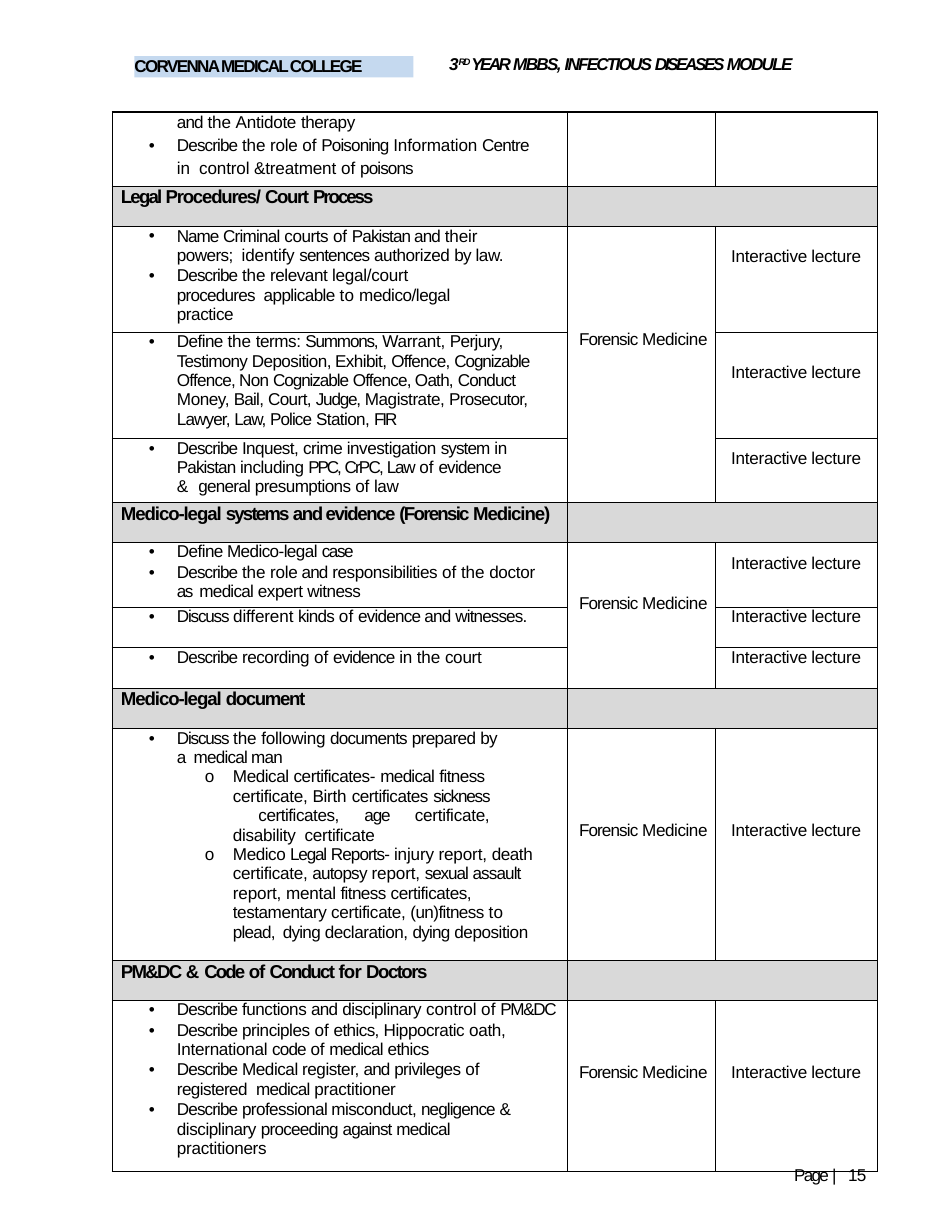
from typing import NamedTuple, Optional
from lxml.etree import SubElement
from pptx import Presentation
from pptx.dml.color import RGBColor
from pptx.enum.shapes import MSO_SHAPE
from pptx.enum.text import MSO_ANCHOR, PP_ALIGN
from pptx.oxml.ns import qn
from pptx.util import Inches, Pt

BLACK = RGBColor(0, 0, 0)
GREY = RGBColor(0xD9, 0xD9, 0xD9)
BLUE = RGBColor(0xC5, 0xD9, 0xEF)
FONT = "Arial"
COLS, ROWS = 85, 110


class Para(NamedTuple):
    runs: list
    right: float = 0
    left: float = 0
    bullet: Optional[str] = None
    align: PP_ALIGN = PP_ALIGN.LEFT
    spacing: object = 1.0
    before: float = 0
    size: float = 11
    bold: bool = False
    italic: bool = False


def item(*runs, right=0, spacing=1.02):
    return Para(runs, right, 5.8, "•", spacing=spacing, before=0.6)


def subitem(*runs, right=0, align=PP_ALIGN.LEFT):
    return Para(runs, right, 10.8, "o", align, 1.02)


def heading(*runs):
    return Para(runs, left=0.8, spacing=Pt(14.1), size=12, bold=True)


class Page:
    def __init__(self):
        self.prs = Presentation()
        self.prs.slide_width, self.prs.slide_height = Inches(8.5), Inches(11)
        self.s = self.prs.slides.add_slide(self.prs.slide_layouts[6])

    def x(self, cols):
        return round(self.prs.slide_width * cols / COLS)

    def y(self, rows):
        return round(self.prs.slide_height * rows / ROWS)

    def place(self, col, row, width, height):
        return self.x(col), self.y(row), self.x(width), self.y(height)

    def fill_text(self, tf, paras):
        for i, para in enumerate(paras):
            p = tf.add_paragraph() if i else tf.paragraphs[0]
            p.alignment = para.align
            p.line_spacing = para.spacing
            p.space_before = Pt(para.before)
            pPr = p._p.get_or_add_pPr()
            pPr.set("marL", str(self.x(para.left)))
            pPr.set("marR", str(self.x(para.right)))
            pPr.set("indent", str(self.x(-2.5) if para.bullet else 0))
            if para.bullet:
                SubElement(pPr, qn("a:buFont")).set("typeface", FONT)
                SubElement(pPr, qn("a:buChar")).set("char", para.bullet)
            for text, spc, *base in para.runs:
                r = p.add_run()
                r.text = text
                r.font.name, r.font.size = FONT, Pt(10.5 if base else para.size)
                r.font.bold, r.font.italic = para.bold, para.italic
                r.font.color.rgb = BLACK
                rPr = r._r.get_or_add_rPr()
                rPr.set("spc", str(round(spc * 100)))
                if base:
                    rPr.set("baseline", str(base[0] * 1000))

    def frame(self, shape, para, top=0):
        tf = shape.text_frame
        tf.margin_left = tf.margin_right = tf.margin_bottom = 0
        tf.margin_top = self.y(top)
        tf.vertical_anchor = MSO_ANCHOR.TOP
        tf.word_wrap = True
        self.fill_text(tf, [para])

    def text(self, at, para, top=0):
        self.frame(self.s.shapes.add_textbox(*self.place(*at)), para, top)

    def box(self, at, color, para):
        sp = self.s.shapes.add_shape(MSO_SHAPE.RECTANGLE, *self.place(*at))
        sp.shadow.inherit = False
        sp.fill.solid()
        sp.fill.fore_color.rgb = color
        sp.line.fill.background()
        self.frame(sp, para)

    def borders(self, cell, first):
        tcPr = cell._tc.get_or_add_tcPr()
        for side in "LRTB":
            ln = SubElement(tcPr, qn("a:ln" + side))
            ln.set("w", str(Pt(1 if first and side == "T" else 0.5)))
            fill = SubElement(ln, qn("a:solidFill"))
            SubElement(fill, qn("a:srgbClr")).set("val", str(BLACK))

    def table(self, col, row, widths, heights, shaded):
        at = self.place(col, row, sum(widths), sum(heights))
        tbl = self.s.shapes.add_table(len(heights), len(widths), *at).table
        tbl.first_row = tbl.horz_banding = False
        for c, width in zip(tbl.columns, widths):
            c.width = self.x(width)
        for i, (tr, height) in enumerate(zip(tbl.rows, heights)):
            tr.height = self.y(height)
            for cell in tr.cells:
                cell.margin_left = cell.margin_right = 0
                cell.margin_top = cell.margin_bottom = 0
                self.borders(cell, i == 0)
                if i in shaded:
                    cell.fill.solid()
                    cell.fill.fore_color.rgb = GREY
                else:
                    cell.fill.background()
        return tbl

    def cell(self, cell, paras, top=0):
        cell.margin_top = self.y(top)
        self.fill_text(cell.text_frame, paras)


DESCRIBE, DISCUSS = ("Describe ", -0.6), ("Discuss ", -0.8)
THE, OF, AND, MEDICAL = ("the ", -0.1), ("of ", 0), ("and ", -0.6), ("medical ", -0.5)
LECTURE = Para([("Interactive lecture", -0.2)], right=1.4, align=PP_ALIGN.RIGHT)
SUBJECT = Para([("Forensic ", -0.6), ("Medicine", -0.3)], left=1)

HEADINGS = {
    1: heading(("Legal ", -1.2), ("Procedures/ ", -0.8), ("Court ", -0.9), ("Process", -1.3)),
    5: heading(("Medico-legal ", -0.7), ("systems ", -1.2), ("and evidence ", -0.9),
               ("(Forensic ", -1.1), ("Medicine)", -0.7)),
    9: heading(("Medico-legal ", -0.7), ("document", -0.9)),
    11: heading(("PM&DC ", -1.1), ("& ", -0.2), ("Code ", -1.2), ("of ", -0.6),
                ("Conduct ", -1.1), ("for ", -0.5), ("Doctors", -1)),
}
TOPICS = {
    0: [Para([AND, THE, ("Antidote ", -0.2), ("therapy", -0.3)], left=5.8, spacing=Pt(13.2)),
        item(DESCRIBE, THE, ("role ", -0.2), OF, ("Poisoning ", -0.6), ("Information ", -0.1),
             ("Centre ", -0.5), ("in  control &treatment ", -0.1), OF, ("poisons", -0.6),
             right=2.6, spacing=1.16)],
    2: [item(("Name ", -0.7), ("Criminal ", -0.5), ("courts ", -0.3), ("of ", -0.1),
             ("Pakistan and ", -0.6), ("their ", -0.1), ("powers;  ", -0.4), ("identify ", -0.1),
             ("sentences ", -0.6), ("authorized ", -0.3), ("by ", -0.5), ("law.", -0.3), right=4.6),
        item(DESCRIBE, THE, ("relevant ", -0.3), ("legal/court ", -0.2), ("procedures  ", -0.5),
             ("applicable ", -0.4), ("to ", 0.1), ("medico/legal practice", -0.3), right=8.7)],
    3: [item(("Define ", -0.4), THE, ("terms: ", -0.3), ("Summons, ", -0.8), ("Warrant, ", -0.2),
             ("Perjury,  ", -0.4), ("Testimony ", -0.5), ("Deposition, Exhibit, ", -0.4),
             ("Offence, ", -0.5), ("Cognizable  ", -0.7), ("Offence, Non ", -0.5),
             ("Cognizable ", -0.7), ("Offence, Oath, ", -0.5), ("Conduct  ", -0.6),
             ("Money, ", -0.3), ("Bail, ", -0.5), ("Court, ", -0.4), ("Judge, ", -0.8),
             ("Magistrate, ", -0.3), ("Prosecutor,  ", -0.5), ("Lawyer, ", -0.6), ("Law, ", -0.7),
             ("Police ", -0.6), ("Station, ", -0.4), ("FIR", -1.4), right=2)],
    4: [item(DESCRIBE, ("Inquest, ", -0.4), ("crime investigation ", -0.3), ("system ", -0.6),
             ("in  ", -0.1), ("Pakistan ", -0.6), ("including ", -0.3), ("PPC, ", -1.4),
             ("CrPC, ", -1.2), ("Law ", -0.8), OF, ("evidence ", -0.5), ("&  ", 0.1),
             ("general ", -0.5), ("presumptions ", -0.4), ("of ", -0.1), ("law", -0.3), right=4.8)],
    6: [item(("Define Medico-legal ", -0.4), ("case", -0.9), spacing=1.0),
        item(DESCRIBE, THE, ("role", -0.2), (" and ", -0.6), ("responsibilities ", -0.3), OF, THE,
             ("doctor ", -0.2), ("as  ", -1.1), MEDICAL, ("expert ", -0.3), ("witness", -0.4),
             right=2)],
    7: [item(DISCUSS, ("different ", -0.1), ("kinds ", -0.5), OF, ("evidence and ", -0.5),
             ("witnesses.", -0.6), spacing=1.0)],
    8: [item(DESCRIBE, ("recording ", -0.3), OF, ("evidence ", -0.6), ("in the ", -0.1),
             ("court", -0.2), spacing=1.0)],
    10: [item(DISCUSS, THE, ("following ", -0.2), ("documents ", -0.5), ("prepared ", -0.4),
              ("by ", -0.5), ("a  ", -0.8), ("medical man", -0.5), right=5.7),
         subitem(("Medical certificates- ", -0.3), MEDICAL, ("fitness  ", -0.4),
                 ("certificate, Birth ", -0.2), ("certificates ", -0.3), ("sickness  ", -0.8),
                 ("certificates, ", -0.3), ("age ", -0.8),
                 ("certificate, disability  certificate", -0.2),
                 right=7, align=PP_ALIGN.JUSTIFY),
         subitem(("Medico ", -0.3), ("Legal ", -0.8), ("Reports- ", -0.6), ("injury report, ", -0.1),
                 ("death  ", -0.3), ("certificate, ", -0.2), ("autopsy ", -0.5), ("report, ", -0.1),
                 ("sexual ", -0.7), ("assault  ", -0.6), ("report, ", -0.1), ("mental ", -0.2),
                 ("fitness ", -0.4), ("certificates,  testamentary ", -0.3),
                 ("certificate, ", -0.2), ("(un)fitness ", -0.4), ("to ", 0.1),
                 ("plead,  dying ", -0.5), ("declaration, ", -0.3), ("dying ", -0.5),
                 ("deposition", -0.3), right=2.7)],
    12: [item(DESCRIBE, ("functions ", -0.3), ("and ", -0.5), ("disciplinary ", -0.3),
              ("control ", -0.1), OF, ("PM&DC", -0.9), spacing=1.0),
         item(DESCRIBE, ("principles ", -0.3), OF, ("ethics, ", -0.4), ("Hippocratic ", -0.3),
              ("oath,  International ", -0.2), ("code ", -0.6), ("of ", -0.1), MEDICAL,
              ("ethics", -0.4), right=2.5),
         item(DESCRIBE, ("Medical register, ", -0.3), AND, ("privileges ", -0.4), OF,
              ("registered  ", -0.4), MEDICAL, ("practitioner", -0.2), right=4.7),
         item(DESCRIBE, ("professional misconduct, ", -0.4), ("negligence ", -0.6), ("&  ", 0.1),
              ("disciplinary ", -0.3), ("proceeding ", -0.5), ("against ", -0.6), MEDICAL,
              ("practitioners", -0.2), right=3.8)],
}
SUBJECT_TOPS = {2: 9.3, 6: 4.6, 10: 8.3, 12: 5.6}
LECTURE_TOPS = {2: 1.9, 3: 2.8, 4: 1, 6: 1, 7: 0, 8: 0, 10: 8.3, 12: 5.6}
HEIGHTS = [6.6, 3.6, 9.4, 9.5, 5.7, 3.6, 5.8, 3.6, 3.6, 3.6, 20.7, 3.6, 15.3]


def main():
    page = Page()
    page.text((70.8, 104.2, 7.5, 1.8), Para(
        [("Page ", -1.1), ("| ", 2.2), ("15", -0.6)], left=0.1, spacing=Pt(11.5)))
    page.text((40, 4.7, 38.7, 2), Para(
        [("3", -0.8), ("RD ", -1.2, 32), ("YEAR ", -1.7), ("MBBS, ", -1.1), ("INFECTIOUS ", -1.2),
         ("DISEASES ", -1.6), ("MODULE", -1.1)], left=0.1, bold=True, italic=True), top=0.1)
    page.box((12, 5, 24.9, 1.9), BLUE, Para(
        [("CORVENNA MEDICAL COLLEGE", -1.1)], spacing=Pt(12.9), bold=True))

    tbl = page.table(10, 10, [40.7, 13.2, 14.4], HEIGHTS, HEADINGS)
    for row, para in HEADINGS.items():
        page.cell(tbl.cell(row, 0), [para])
        tbl.cell(row, 1).merge(tbl.cell(row, 2))
    for row, paras in TOPICS.items():
        page.cell(tbl.cell(row, 0), paras)
    for row, top in LECTURE_TOPS.items():
        page.cell(tbl.cell(row, 2), [LECTURE], top)
    for row, top in SUBJECT_TOPS.items():
        page.cell(tbl.cell(row, 1), [SUBJECT], top)
    for row in (2, 6):
        tbl.cell(row, 1).merge(tbl.cell(row + 2, 1))
    page.prs.save("out.pptx")


if __name__ == "__main__":
    main()
